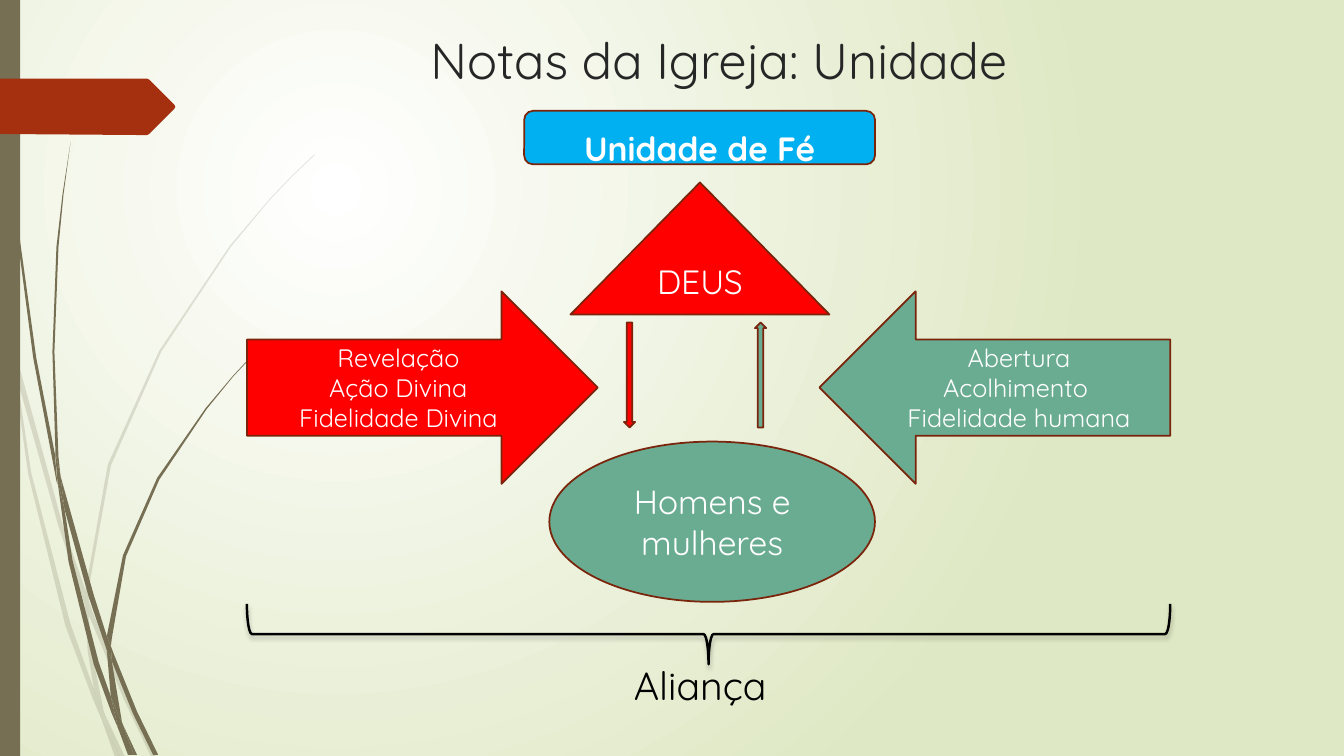
from lxml import etree
from pptx import Presentation
from pptx.dml.color import RGBColor
from pptx.enum.shapes import MSO_SHAPE
from pptx.enum.text import MSO_ANCHOR, PP_ALIGN
from pptx.oxml import parse_xml
from pptx.oxml.ns import nsdecls, qn
from pptx.util import Pt

CENTER, LEFT = PP_ALIGN.CENTER, PP_ALIGN.LEFT
MIDDLE, TOP = MSO_ANCHOR.MIDDLE, MSO_ANCHOR.TOP
PILL, TRIANGLE, ELLIPSE = MSO_SHAPE.ROUNDED_RECTANGLE, MSO_SHAPE.ISOSCELES_TRIANGLE, MSO_SHAPE.OVAL
DOWN, UP = MSO_SHAPE.DOWN_ARROW, MSO_SHAPE.UP_ARROW
RIGHT_ARROW, LEFT_ARROW = MSO_SHAPE.RIGHT_ARROW, MSO_SHAPE.LEFT_ARROW
RECT, BRACE = MSO_SHAPE.RECTANGLE, MSO_SHAPE.LEFT_BRACE

WHITE = RGBColor(0xFF, 0xFF, 0xFF)
BLACK = RGBColor(0, 0, 0)
CHARCOAL = RGBColor(0x26, 0x26, 0x26)
CREAM = RGBColor(0xDF, 0xE8, 0xC4)
OLIVE = RGBColor(0x76, 0x6F, 0x54)
RUST = RGBColor(0xA5, 0x30, 0x10)
OUTLINE = RGBColor(0x7A, 0x24, 0x0C)
BLUE = RGBColor(0x00, 0xB0, 0xF0)
RED = RGBColor(0xFF, 0, 0)
GREEN = RGBColor(0x6A, 0xAC, 0x91)
FONT = "Quicksand"
WIDTH, HEIGHT = 960, 540

# Outlines of the grass pieces and the flag, on a grid of 0.72 pt
GRID = Pt(0.72)
PALE_GRASS = [
    [(11, 350), (9, 322), (0, 282), (0, 299), (10, 344)],
    [(58, 522), (84, 599), (85, 586), (62, 520), (14, 345), (17, 376)],
    [(92, 607), (88, 596), (88, 610), (123, 694), (150, 751), (155, 751), (127, 692)],
    [(119, 751), (124, 751), (105, 711)],
    [(93, 683), (70, 619), (31, 469), (17, 376), (11, 350), (28, 470), (65, 621),
     (92, 693), (101, 714), (99, 707)],
    [(84, 599), (87, 646), (93, 683), (96, 692), (105, 711), (103, 706), (91, 646),
     (88, 610), (88, 608)],
    [(88, 584), (110, 462), (160, 349), (229, 245), (268, 198), (290, 175), (312, 154),
     (312, 153), (289, 175), (268, 197), (228, 244), (158, 348), (107, 461), (85, 584),
     (85, 586), (88, 596)],
    [(101, 714), (114, 751), (119, 751)],
    [(88, 608), (88, 610), (88, 596), (85, 586), (84, 599)],
    [(96, 692), (93, 683), (99, 707), (101, 714), (119, 751), (105, 711)],
]
DARK_GRASS = [
    [(7, 110), (17, 233), (33, 355), (56, 477), (57, 481), (55, 457), (55, 453),
     (36, 355), (19, 232), (8, 109), (5, 48), (4, 0), (3, 0), (4, 48)],
    [(88, 592), (106, 645), (106, 633), (106, 631), (93, 590), (60, 472), (64, 505)],
    [(113, 649), (110, 641), (111, 656), (132, 708), (152, 749), (157, 749), (136, 706)],
    [(110, 691), (98, 657), (72, 556), (64, 505), (57, 477), (68, 557), (93, 659),
     (111, 708), (117, 722), (116, 717)],
    [(60, 472), (58, 453), (54, 349), (58, 245), (63, 193), (70, 141), (62, 193),
     (56, 245), (52, 349), (55, 449)],
    [(133, 749), (136, 749), (122, 719)],
    [(57, 477), (64, 505), (60, 472), (55, 449), (55, 453)],
    [(111, 633), (125, 552), (158, 476), (205, 406), (231, 374), (245, 359), (261, 344),
     (260, 344), (245, 358), (231, 373), (204, 405), (156, 474), (122, 551), (106, 631),
     (110, 641)],
    [(117, 722), (127, 749), (131, 749)],
    [(106, 645), (110, 691), (116, 706), (122, 719), (121, 716), (111, 656), (109, 651)],
    [(106, 645), (109, 651), (111, 656), (110, 641), (106, 631), (106, 633)],
    [(116, 706), (110, 691), (116, 717), (117, 722), (130, 749), (133, 749), (122, 719)],
]
FLAG = [(173, 108), (148, 133), (146, 134), (136, 134), (0, 133), (0, 78), (136, 78),
        (146, 78), (148, 79), (173, 104), (174, 106)]


def write(sp, lines, size, color, align=CENTER, anchor=MIDDLE, bold=False, spacing=None):
    tf = sp.text_frame
    tf.word_wrap = True
    tf.vertical_anchor = anchor
    tf.text = "\n".join(lines)
    for p in tf.paragraphs:
        p.alignment = align
        p.line_spacing = spacing
        for r in p.runs:
            r.font.name, r.font.size, r.font.bold = FONT, Pt(size), bold
            r.font.color.rgb = color


def add_label(slide, box, text, size, color, align):
    sp = slide.shapes.add_textbox(*map(Pt, box))
    write(sp, [text], size, color, align, TOP)


def paint(sp, fill, line=None):
    sp.shadow.inherit = False
    sp.fill.solid()
    sp.fill.fore_color.rgb = fill
    if line is None:
        sp.line.fill.background()
    else:
        sp.line.color.rgb = line
        sp.line.width = Pt(1.25)


def add_filled(slide, kind, box, fill, line=None):
    sp = slide.shapes.add_shape(kind, *map(Pt, box))
    paint(sp, fill, line)
    return sp


def add_outline(shapes, origin, points, fill, alpha=None):
    builder = shapes.build_freeform(*points[0], scale=GRID)
    builder.add_line_segments(points[1:], close=True)
    sp = builder.convert_to_shape(*map(Pt, origin))
    paint(sp, fill)
    if alpha:
        clr = sp._element.spPr.find(qn("a:solidFill"))[0]
        etree.SubElement(clr, qn("a:alpha")).set("val", str(alpha * 1000))


def set_background(slide):
    fill = slide.background.fill
    fill.gradient()
    for stop, color in zip(fill.gradient_stops, (WHITE, CREAM)):
        stop.color.rgb = color
    # Radial instead of linear
    grad = slide._element.find(".//" + qn("a:gradFill"))
    grad.replace(grad.find(qn("a:lin")), parse_xml(
        f'<a:path {nsdecls("a")} path="circle">'
        '<a:fillToRect l="50000" t="50000" r="100000" b="100000"/></a:path>'))


def draw_side_decoration(slide, box):
    x, y, w, h = box
    for pieces, alpha in ((PALE_GRASS, 20), (DARK_GRASS, None)):
        group = slide.shapes.add_group_shape()
        for piece in pieces:
            add_outline(group.shapes, (x, y), piece, OLIVE, alpha)
    add_filled(slide, RECT, (x, y, w, h), OLIVE)
    add_outline(slide.shapes, (x, y), FLAG, RUST)


def draw_brace(slide, box):
    x, y, w, h = box
    # Upright brace about the same centre, then turned to open upwards
    sp = slide.shapes.add_shape(
        BRACE, Pt(x + (w - h) / 2), Pt(y + (h - w) / 2), Pt(h), Pt(w))
    sp.rotation = 270
    sp.fill.background()
    sp.line.color.rgb = BLACK
    sp.line.width = Pt(1.75)
    sp._element.spPr.append(parse_xml(
        f'<a:effectLst {nsdecls("a")}><a:outerShdw blurRad="{Pt(3)}" dist="{Pt(2)}" '
        'dir="5400000" rotWithShape="0"><a:srgbClr val="000000">'
        '<a:alpha val="25000"/></a:srgbClr></a:outerShdw></a:effectLst>'))


def draw_covenant(slide, box):
    x, y, w, h = box
    # Heading
    sp = add_filled(slide, PILL, (x + 198, y, 250.6, 38.2), BLUE, OUTLINE)
    write(sp, ["Unidade de Fé"], 24, WHITE, bold=True, spacing=1.5)
    # God above, people below
    sp = add_filled(slide, TRIANGLE, (x + 231.1, y + 51.1, 185, 94.3), RED, OUTLINE)
    write(sp, ["DEUS"], 24, WHITE)
    sp = add_filled(slide, ELLIPSE, (x + 216, y + 236.2, 232.6, 114.5), GREEN, OUTLINE)
    write(sp, ["Homens e mulheres"], 24, WHITE)
    for kind, dx, color in ((DOWN, 269.3, RED), (UP, 362.9, GREEN)):
        add_filled(slide, kind, (x + dx, y + 151.2, 8, 75), color, OUTLINE)
    # Side arrows
    arrow_w = 250.6
    for kind, dx, color, lines in (
            (RIGHT_ARROW, 0, RED, ["Revelação", "Ação Divina", "Fidelidade Divina"]),
            (LEFT_ARROW, w - arrow_w, GREEN,
             ["Abertura", "Acolhimento ", "Fidelidade humana"])):
        sp = add_filled(slide, kind, (x + dx, y + 128.9, arrow_w, 137.5), color, OUTLINE)
        write(sp, lines, 18, WHITE)
    # Brace and its label
    draw_brace(slide, (x, y + 352.1, w, 43.2))
    add_label(slide, (x + 269.3, y + h - 41, 124, 41), "Aliança", 28, BLACK, LEFT)


def main():
    prs = Presentation()
    prs.slide_width, prs.slide_height = Pt(WIDTH), Pt(HEIGHT)
    slide = prs.slides.add_slide(prs.slide_layouts[6])
    set_background(slide)
    draw_side_decoration(slide, (0, 0, 14.4, HEIGHT))
    add_label(slide, (283.7, 17.3, 459.4, 65.5), "Notas da Igreja: Unidade",
              36, CHARCOAL, CENTER)
    draw_covenant(slide, (176.4, 79.2, 659.5, 430.6))
    prs.save("out.pptx")


if __name__ == "__main__":
    main()
